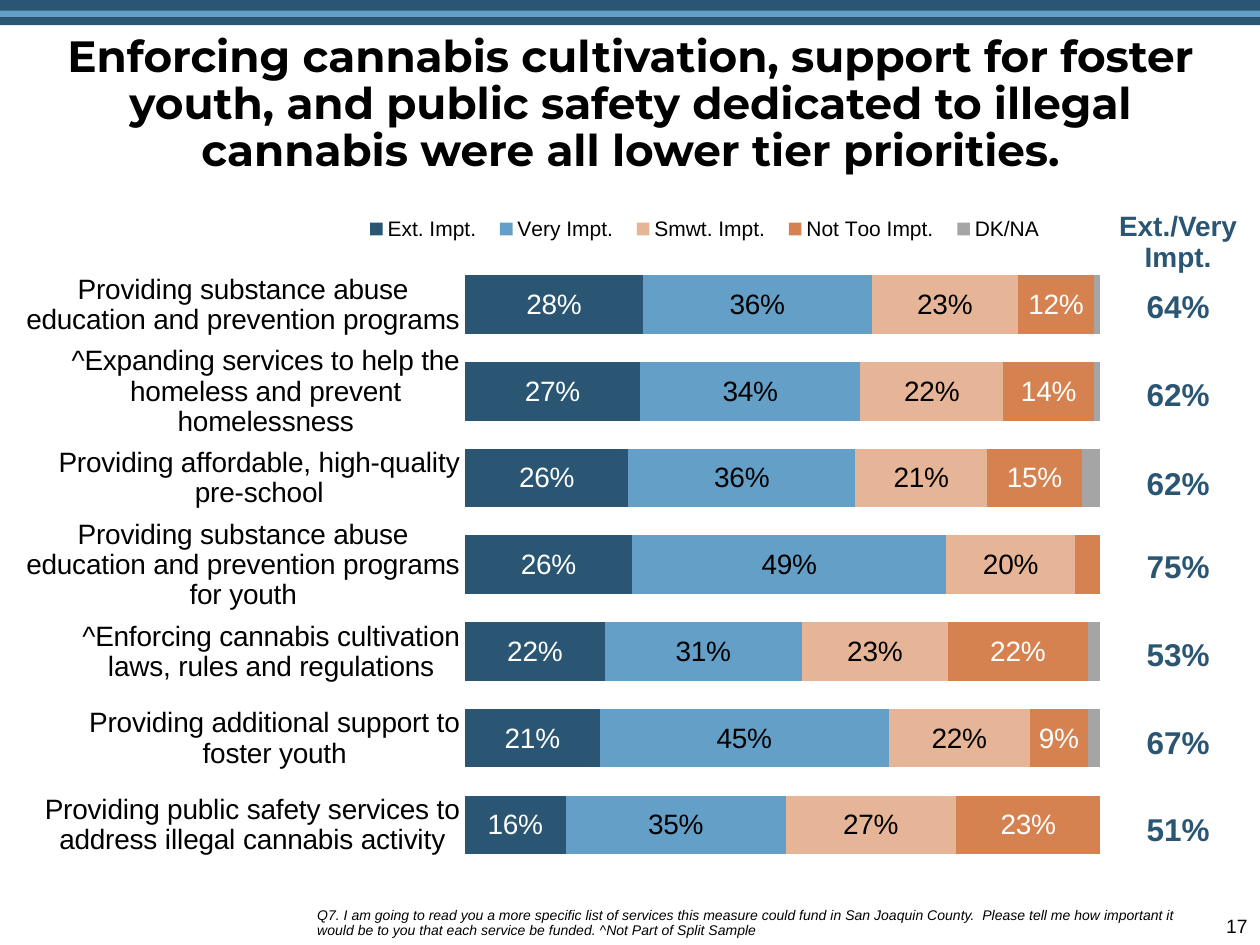
"""Build a survey slide ranking lower tier service priorities."""
from lxml import etree
from pptx import Presentation
from pptx import util as u
from pptx.chart.data import CategoryChartData
from pptx.dml.color import RGBColor
from pptx.enum import chart as ch
from pptx.enum import shapes, text

Pt = u.Pt
NAVY = RGBColor(0x2A, 0x56, 0x73)
BLUE = RGBColor(0x63, 0x9F, 0xC6)
PEACH = RGBColor(0xE6, 0xB4, 0x96)
ORANGE = RGBColor(0xD6, 0x82, 0x50)
GRAY = RGBColor(0xA5, 0xA5, 0xA5)
BLACK = RGBColor(0, 0, 0)
WHITE = RGBColor(0xFF, 0xFF, 0xFF)
CHART_NS = "http://schemas.openxmlformats.org/drawingml/2006/chart"

TITLE = ("Enforcing cannabis cultivation, support for foster youth, and public safety "
         "dedicated to illegal cannabis were all lower tier priorities.")
FOOTNOTE = ("Q7. I am going to read you a more specific list of services this measure could "
            "fund in San Joaquin County.  Please tell me how important it would be to you "
            "that each service be funded. ^Not Part of Split Sample")
SERVICES = [
    "Providing substance abuse education and prevention programs",
    "^Expanding services to help the homeless and prevent homelessness",
    "Providing affordable, high-quality pre-school",
    "Providing substance abuse education and prevention programs for youth",
    "^Enforcing cannabis cultivation laws, rules and regulations",
    "Providing additional support to foster youth",
    "Providing public safety services to address illegal cannabis activity",
]
RATINGS = [
    ("Ext. Impt.", (0.28, 0.27, 0.26, 0.26, 0.22, 0.21, 0.16), NAVY, WHITE),
    ("Very Impt.", (0.36, 0.34, 0.36, 0.49, 0.31, 0.45, 0.35), BLUE, BLACK),
    ("Smwt. Impt.", (0.23, 0.22, 0.21, 0.20, 0.23, 0.22, 0.27), PEACH, BLACK),
    ("Not Too Impt.", (0.12, 0.14, 0.15, 0.04, 0.22, 0.09, 0.23), ORANGE, WHITE),
    ("DK/NA", (0.01, 0.01, 0.03, 0, 0.02, 0.02, 0), GRAY, None),
]
SMALLEST_LABEL = 0.05
TOTALS = [("Ext./Very Impt.", 38.2), ("64%", 29.5), ("62%", 50.4), ("62%", 50.4),
          ("75%", 47.5), ("53%", 50.4), ("67%", 50.4), ("51%", 49.7)]


def chart_node(parent, tag, val=None):
    """Append a chart XML element and return it."""
    node = etree.SubElement(parent, f"{{{CHART_NS}}}{tag}")
    if val is not None:
        node.set("val", str(val))
    return node


def set_layout(owner, index, bounds, inner=False):
    """Place a chart part at fractions of the chart area."""
    for old in owner.findall(f"{{{CHART_NS}}}layout"):
        owner.remove(old)
    layout = chart_node(owner, "layout")
    owner.insert(index, layout)
    manual = chart_node(layout, "manualLayout")
    if inner:
        chart_node(manual, "layoutTarget", "inner")
    for mode in ("xMode", "yMode"):
        chart_node(manual, mode, "edge")
    for side, fraction in zip("xywh", bounds):
        chart_node(manual, side, fraction)


def add_run(paragraph, words, size, color, name="Arial", bold=False, italic=False):
    """Append one formatted run."""
    run = paragraph.add_run()
    run.text = words
    font = run.font
    font.size, font.name, font.bold, font.italic = Pt(size), name, bold, italic
    font.color.rgb = color


def add_band(slide, top, height, color):
    """Draw a full-width header band."""
    band = slide.shapes.add_shape(
        shapes.MSO_SHAPE.RECTANGLE, 0, Pt(top), Pt(720), Pt(height))
    band.shadow.inherit = False
    band.fill.solid()
    band.fill.fore_color.rgb = color
    band.line.fill.background()


def set_title(slide):
    """Place and fill the title placeholder."""
    title = slide.shapes.title
    title.left, title.top, title.width, title.height = Pt(10.8), Pt(15.1), Pt(699.1), Pt(90)
    title.text_frame.vertical_anchor = text.MSO_ANCHOR.MIDDLE
    paragraph = title.text_frame.paragraphs[0]
    paragraph.alignment = text.PP_ALIGN.CENTER
    paragraph.line_spacing = 0.9
    add_run(paragraph, TITLE, 25, BLACK, "Montserrat", bold=True)


def add_text(slide, bounds, words, size, align, anchor, italic=False, spacing=None):
    """Add a wrapped text box with one paragraph."""
    frame = slide.shapes.add_textbox(*map(Pt, bounds)).text_frame
    frame.word_wrap = True
    frame.vertical_anchor = anchor
    paragraph = frame.paragraphs[0]
    paragraph.alignment = align
    paragraph.line_spacing = spacing
    add_run(paragraph, words, size, BLACK, italic=italic)


def format_series(series, values, fill, label_color):
    """Colour a series and label its larger segments."""
    series.format.fill.solid()
    series.format.fill.fore_color.rgb = fill
    if label_color is None:
        return
    labels = series.data_labels
    labels.show_value = True
    labels.position = ch.XL_LABEL_POSITION.CENTER
    labels.number_format, labels.number_format_is_linked = "0%", False
    labels.font.size, labels.font.name = Pt(16), "Arial"
    labels.font.color.rgb = label_color
    small = [i for i, value in enumerate(values) if value < SMALLEST_LABEL]
    for position, point in enumerate(small):
        hidden = chart_node(labels._element, "dLbl")
        labels._element.insert(position, hidden)
        chart_node(hidden, "idx", point)
        chart_node(hidden, "delete", 1)


def add_ratings_chart(slide):
    """Add the stacked importance chart."""
    data = CategoryChartData(number_format="0%")
    data.categories = SERVICES
    for name, values, _, _ in RATINGS:
        data.add_series(name, values)
    chart = slide.shapes.add_chart(
        ch.XL_CHART_TYPE.BAR_STACKED_100, Pt(10.8), Pt(116.6), Pt(637.2), Pt(408.2), data).chart
    chart.has_title = False
    chart.font.size, chart.font.name = Pt(18), "Arial"
    chart.font.color.rgb = BLACK

    services = chart.category_axis
    services.reverse_order = True
    services.major_tick_mark = ch.XL_TICK_MARK.NONE
    services.format.line.fill.background()
    services.tick_labels.font.size = Pt(16)

    shares = chart.value_axis
    shares.minimum_scale, shares.maximum_scale, shares.major_unit = 0, 1, 0.2
    shares.has_major_gridlines = False
    shares.visible = False

    chart.has_legend = True
    chart.legend.position = ch.XL_LEGEND_POSITION.TOP
    chart.legend.include_in_layout = False
    chart.legend.font.size = Pt(12)
    set_layout(chart.legend._element, 1, (0.3, 0.01, 0.63, 0.05))

    plot = chart.plots[0]
    plot.gap_width, plot.overlap, plot.vary_by_categories = 48, 100, False
    set_layout(plot._element.getparent(), 0, (0.4, 0.08, 0.57, 0.85), inner=True)
    for series, (_, values, fill, label_color) in zip(plot.series, RATINGS):
        format_series(series, values, fill, label_color)


def add_totals_table(slide):
    """Add the column of combined importance totals."""
    height = sum(row_height for _, row_height in TOTALS)
    table = slide.shapes.add_table(
        len(TOTALS), 1, Pt(632.9), Pt(117.4), Pt(80.6), Pt(height)).table
    table.first_row = table.horz_banding = False
    for index, (total, row_height) in enumerate(TOTALS):
        table.rows[index].height = Pt(row_height)
        cell = table.cell(index, 0)
        cell.fill.background()
        cell.margin_left = cell.margin_right = cell.margin_top = Pt(0.7)
        cell.margin_bottom = 0
        cell.vertical_anchor = text.MSO_ANCHOR.BOTTOM
        paragraph = cell.text_frame.paragraphs[0]
        paragraph.alignment = text.PP_ALIGN.CENTER
        add_run(paragraph, total, 18 if index else 16, NAVY, bold=True)


def main():
    """Assemble and save the slide."""
    deck = Presentation()
    deck.slide_width, deck.slide_height = Pt(720), Pt(540)
    slide = deck.slides.add_slide(deck.slide_layouts[5])
    add_text(slide, (613.4, 519.1, 106.6, 20.9), "17", 11,
             text.PP_ALIGN.RIGHT, text.MSO_ANCHOR.TOP)
    add_band(slide, 0, 14.4, NAVY)
    add_band(slide, 6, 3.6, BLUE)
    add_ratings_chart(slide)
    add_totals_table(slide)
    add_text(slide, (174.2, 508.3, 524.9, 31.7), FOOTNOTE, 8,
             text.PP_ALIGN.LEFT, text.MSO_ANCHOR.BOTTOM, italic=True, spacing=0.9)
    set_title(slide)
    deck.save("out.pptx")


if __name__ == "__main__":
    main()
